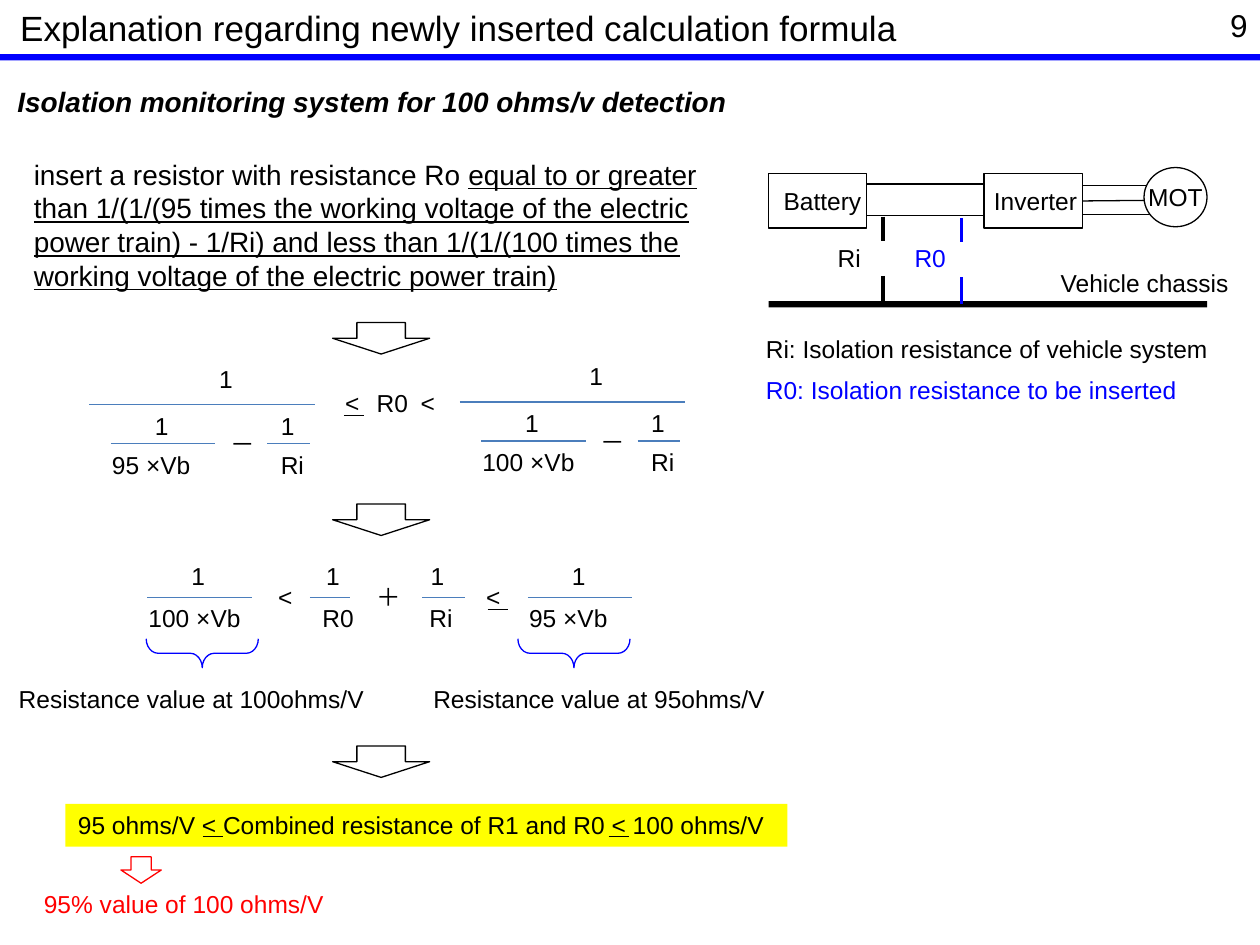
import pptx
import pptx.util
import pptx.dml.color
import pptx.enum.shapes
import pptx.enum.text
import pptx.oxml

Inches = pptx.util.Inches
Shape = pptx.enum.shapes.MSO_SHAPE
Align = pptx.enum.text.PP_ALIGN
Anchor = pptx.enum.text.MSO_ANCHOR
AutoSize = pptx.enum.text.MSO_AUTO_SIZE

COLORS = {"black": "000000", "white": "FFFFFF", "blue": "0000FF",
          "bar": "4B7EBC", "red": "FF0000", "yellow": "FFFF00"}
FONT = "Arial"
LABEL_H = 0.34

TITLE = "Explanation regarding newly inserted calculation formula"
SUBTITLE = "Isolation monitoring system for 100 ohms/v detection"
INSTRUCTION = [
    ("insert a resistor with resistance Ro ", False),
    ("equal to or greater than 1/(1/(95 times the working voltage of the electric "
     "power train) - 1/Ri) and less than 1/(1/(100 times the working voltage of "
     "the electric power train)", True),
]
CONCLUSION = "95 ohms/V < Combined resistance of R1 and R0 < 100 ohms/V"

TERM_WIDTHS = {"1": 0.31, "<": 0.32, "Ri": 0.39, "R0": 0.45, "－": 0.4, "＋": 0.4,
               "95 ×Vb": 0.91, "100 ×Vb": 1.02}
# denominator, bar left, bar width, numerator left, denominator left
SUM_FRACTIONS = [
    ("100 ×Vb", 1.17, 0.83, 1.42, 1.08),
    ("R0", 2.46, 0.32, 2.49, 2.46),
    ("Ri", 3.35, 0.34, 3.32, 3.31),
    ("95 ×Vb", 4.19, 0.83, 4.44, 4.1),
]
LIMITS = [("95 ×Vb", 0.71, 3.21), ("100 ×Vb", 3.65, 3.19)]
OPERATORS = [("<", 2.64, 3.03), ("R0", 2.89, 3.03), ("<", 3.24, 3.03),
             ("<", 2.11, 4.57), ("＋", 2.89, 4.57), ("<", 3.76, 4.57)]
EQUAL_MARKS = [(2.73, 3.3), (3.87, 4.84), (1.61, 6.64), (4.83, 6.64)]
STEP_ARROW_TOPS = [2.56, 4, 5.92]
BRACE_LEFTS = [1.49, 4.44]
CAPTIONS = [
    ("Battery", 6.12, 1.43, 0.82, "black"),
    ("Inverter", 7.79, 1.43, 0.86, "black"),
    ("Ri", 6.55, 1.88, 0.39, "black"),
    ("R0", 7.16, 1.88, 0.45, "blue"),
    ("Vehicle chassis", 8.32, 2.08, 1.54, "black"),
    ("Ri: Isolation resistance of vehicle system", 5.98, 2.6, 3.83, "black"),
    ("R0: Isolation resistance to be inserted", 5.98, 2.93, 3.59, "blue"),
    ("Resistance value at 100ohms/V", 0.05, 5.38, 2.96, "black"),
    ("Resistance value at 95ohms/V", 3.34, 5.38, 2.85, "black"),
    ("95% value of 100 ohms/V", 0.25, 7.01, 2.43, "red"),
]
RESISTORS = [(7.01, 1.72, "black"), (7.63, 1.73, "blue")]
ZIGZAG = [(0.01, 0), (-0.06, 0.06), (0.05, 0.12), (-0.06, 0.19), (0.05, 0.23), (0, 0.28)]

prs = pptx.Presentation()
prs.slide_width, prs.slide_height = Inches(10), Inches(7.5)
slide = prs.slides.add_slide(prs.slide_layouts[5])


def rgb(color):
    return pptx.dml.color.RGBColor.from_string(COLORS[color])


def write(text, holder, size=14, color="black", bold=False, italic=False,
          align=Align.LEFT, anchor=Anchor.TOP, wrap=False, grow=True):
    frame = holder.text_frame
    frame.word_wrap = wrap
    frame.auto_size = AutoSize.SHAPE_TO_FIT_TEXT if grow else AutoSize.NONE
    frame.vertical_anchor = anchor
    paragraph = frame.paragraphs[0]
    paragraph.alignment = align
    for part, underlined in [(text, False)] if isinstance(text, str) else text:
        run = paragraph.add_run()
        run.text = part
        font = run.font
        font.name, font.size = FONT, pptx.util.Pt(size)
        font.bold, font.italic, font.underline = bold, italic, underlined
        font.color.rgb = rgb(color)


def text_box(left, top, width, height=LABEL_H):
    return slide.shapes.add_textbox(*map(Inches, (left, top, width, height)))


def term(text, left, top):
    write(text, text_box(left, top, TERM_WIDTHS[text]))


def paint(shape, fill=None, line=None, weight=0.75):
    shape.shadow.inherit = False
    if fill:
        shape.fill.solid()
        shape.fill.fore_color.rgb = rgb(fill)
    else:
        shape.fill.background()
    if line:
        shape.line.color.rgb = rgb(line)
        shape.line.width = pptx.util.Pt(weight)
    else:
        shape.line.fill.background()
    return shape


def add_shape(kind, left, top, width, height, fill=None, line=None):
    box = map(Inches, (left, top, width, height))
    return paint(slide.shapes.add_shape(kind, *box), fill, line)


def add_line(x1, y1, x2, y2, color="black", weight=0.75):
    line = slide.shapes.add_connector(pptx.enum.shapes.MSO_CONNECTOR.STRAIGHT,
                                      *map(Inches, (x1, y1, x2, y2)))
    line.line.color.rgb = rgb(color)
    line.line.width = pptx.util.Pt(weight)
    properties = line._element.spPr
    properties.append(properties.makeelement(pptx.oxml.ns.qn("a:effectLst"), {}))
    return line


def fraction(denominator, bar_left, bar_width, one_left, denominator_left, bar_y, rise):
    term("1", one_left, bar_y - rise)
    add_line(bar_left, bar_y, bar_left + bar_width, bar_y, "bar")
    term(denominator, denominator_left, bar_y)


def limit(denominator, left, bar_y):
    add_line(left, bar_y, left + 1.79, bar_y, "bar")
    term("1", left + 0.93, bar_y - 0.37)
    fraction(denominator, left + 0.17, 0.83, left + 0.42, left + 0.08, bar_y + 0.31, 0.31)
    term("－", left + 1.02, bar_y + 0.15)
    fraction("Ri", left + 1.41, 0.34, left + 1.42, left + 1.42, bar_y + 0.31, 0.31)


def resistor(x, top, color):
    zig_top, zig_bottom = top + 0.19, top + 0.47
    points = [(x + dx, zig_top + dy) for dx, dy in ZIGZAG]
    builder = slide.shapes.build_freeform(*points[0], scale=Inches(1))
    builder.add_line_segments(points[1:], close=False)
    paint(builder.convert_to_shape(), line=color, weight=2)
    add_line(x, top, x, zig_top, color, 2)
    add_line(x, zig_bottom, x, top + 0.68, color, 2)


title = slide.shapes.title
title.left, title.top, title.width, title.height = map(Inches, (0.06, 0, 7.22, 0.44))
write(TITLE, title, size=20)
add_shape(Shape.RECTANGLE, 0, 0.43, 10, 0.05, fill="blue")
write("9", text_box(7.67, 0, 2.33, 0.4), size=18, align=Align.RIGHT,
      anchor=Anchor.MIDDLE, wrap=True, grow=False)
write(SUBTITLE, text_box(0.04, 0.62, 5.91, 0.37), size=16, bold=True, italic=True)
write(INSTRUCTION, text_box(0.17, 1.2, 5.6, 1.18), size=16, wrap=True)

for y in (1.46, 1.71):
    add_line(6.84, y, 7.81, y)
motor_wires = [add_line(8.59, y, 9.14, y) for y in (1.47, 1.59, 1.7)]
battery, inverter = [add_shape(Shape.RECTANGLE, left, 1.38, 0.78, 0.43, "white", "black")
                     for left in (6.1, 7.81)]
motor_wires[1].begin_connect(inverter, 3)
motor = add_shape(Shape.OVAL, 9.08, 1.33, 0.5, 0.47, "white", "black")
write("MOT", motor, align=Align.CENTER, anchor=Anchor.MIDDLE, grow=False)
add_shape(Shape.RECTANGLE, 6.1, 2.39, 3.48, 0.05, fill="black")
for part in RESISTORS:
    resistor(*part)

for part in LIMITS:
    limit(*part)
for part in SUM_FRACTIONS:
    fraction(*part, bar_y=4.74, rise=0.34)
for part in OPERATORS:
    term(*part)
for top in STEP_ARROW_TOPS:
    add_shape(Shape.DOWN_ARROW, 2.64, top, 0.77, 0.25, line="black")
for left in BRACE_LEFTS:
    brace = add_shape(Shape.RIGHT_BRACE, left, 4.74, 0.23, 0.89, line="blue")
    brace.rotation = 90
    brace.adjustments[0] = 0.415

conclusion = add_shape(Shape.RECTANGLE, 0.52, 6.38, 5.73, LABEL_H, fill="yellow")
write(CONCLUSION, conclusion)
for left, y in EQUAL_MARKS:
    add_line(left, y, left + 0.16, y)
add_shape(Shape.DOWN_ARROW, 0.96, 6.8, 0.32, 0.21, line="red")
for text, left, top, width, color in CAPTIONS:
    write(text, text_box(left, top, width), color=color)

prs.save("out.pptx")
